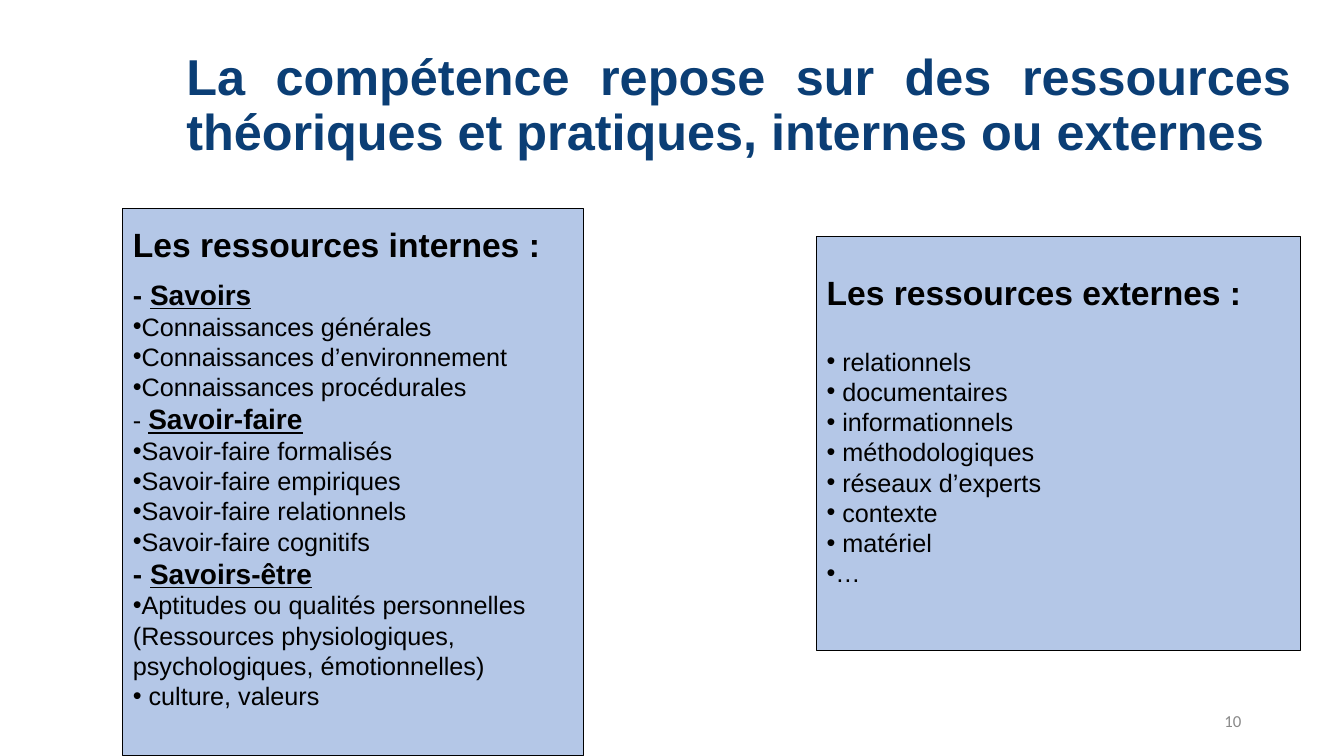
from lxml import etree
from pptx import Presentation
from pptx.dml.color import RGBColor
from pptx.enum.shapes import MSO_SHAPE
from pptx.enum.text import MSO_ANCHOR, PP_ALIGN
from pptx.oxml.ns import qn
from pptx.util import Inches, Pt

RECTANGLE = MSO_SHAPE.RECTANGLE
MIDDLE = MSO_ANCHOR.MIDDLE
LEFT, RIGHT, JUSTIFY = PP_ALIGN.LEFT, PP_ALIGN.RIGHT, PP_ALIGN.JUSTIFY

WIDTH, HEIGHT = 13.33, 7.5
BLACK, NAVY, GREY, PALE_BLUE = "000000", "0B3E75", "898989", "B4C7E7"

BODY = {"name": "Arial", "size": Pt(18), "bold": False}
HEADING = {"name": "Arial", "size": Pt(24), "bold": True}
DASH = {"name": "Arial", "size": Pt(20), "bold": True}
TOPIC = {**DASH, "underline": True}
TITLE = {"name": "Arial", "size": Pt(36), "bold": True}
NUMBER = {"name": "Calibri", "size": Pt(12)}


def colour(code):
    return RGBColor.from_string(code)


def area(left, top, width, height):
    """Turn inches into the four lengths of a shape."""
    return [Inches(value) for value in (left, top, width, height)]


def set_format(target, values):
    for name, value in values.items():
        setattr(target, name, value)


def add_span(para, text, font, code=BLACK):
    span = para.add_run()
    span.text = text
    set_format(span.font, font)
    span.font.color.rgb = colour(code)


def add_bullet_mark(para):
    properties = para._p.get_or_add_pPr()
    etree.SubElement(properties, qn("a:buFont")).set("typeface", "Arial")
    etree.SubElement(properties, qn("a:buChar")).set("char", "•")


def add_para(frame, spans, bullet=False, **layout):
    first = frame.paragraphs[0]
    para = frame.add_paragraph() if first.runs else first
    if bullet:
        add_bullet_mark(para)
    set_format(para, {"alignment": LEFT, **layout})
    for span in spans:
        add_span(para, *span)


def add_label(page, place, text, font, code, **layout):
    frame = page.shapes.add_textbox(*area(*place)).text_frame
    set_format(frame, {"word_wrap": True, "vertical_anchor": MIDDLE})
    add_para(frame, [(text, font, code)], **layout)


def add_panel(page, place, heading, margin_top, margin_bottom):
    """Add a headed blue box and return its text frame."""
    box = page.shapes.add_shape(RECTANGLE, *area(*place))
    box.shadow.inherit = False
    box.fill.solid()
    box.fill.fore_color.rgb = colour(PALE_BLUE)
    box.line.color.rgb = colour(BLACK)
    box.line.width = Pt(0.75)
    frame = box.text_frame
    set_format(frame, {"word_wrap": True, "vertical_anchor": MIDDLE,
                       "margin_top": Inches(margin_top),
                       "margin_bottom": Inches(margin_bottom)})
    add_para(frame, [(heading, HEADING)])
    return frame


def add_bullets(frame, items, gap=0):
    for index, item in enumerate(items):
        add_para(frame, [(item, BODY)], bullet=True,
                 space_before=Pt(0 if index else gap))


def add_topic(frame, topic, items, dash=DASH, gap=0):
    add_para(frame, [("- ", dash), (topic, TOPIC)], space_before=Pt(gap))
    add_bullets(frame, items)


def add_internal_resources(page):
    frame = add_panel(page, (1.22, 2.07, 4.57, 5.43),
                      "Les ressources internes :", 0.05, 0.35)
    add_topic(frame, "Savoirs", [
        "Connaissances générales",
        "Connaissances d’environnement",
        "Connaissances procédurales",
    ], gap=9.6)
    add_topic(frame, "Savoir-faire", [
        "Savoir-faire formalisés",
        "Savoir-faire empiriques",
        "Savoir-faire relationnels",
        "Savoir-faire cognitifs",
    ], dash=BODY)
    add_topic(frame, "Savoirs-être", ["Aptitudes ou qualités personnelles"])
    for line in ("(Ressources physiologiques,", "psychologiques, émotionnelles)"):
        add_para(frame, [(line, BODY)])
    add_bullets(frame, [" culture, valeurs"])


def add_external_resources(page):
    frame = add_panel(page, (8.1, 2.35, 4.8, 4.1),
                      "Les ressources externes :", 0.33, 0.6)
    add_bullets(frame, [
        " relationnels", " documentaires", " informationnels",
        " méthodologiques", " réseaux d’experts", " contexte",
        " matériel", "…",
    ], gap=24)


def main():
    deck = Presentation()
    deck.slide_width, deck.slide_height = Inches(WIDTH), Inches(HEIGHT)
    page = deck.slides.add_slide(deck.slide_layouts[6])
    add_label(page, (1.75, 0.39, 11.16, 1.34),
              "La compétence repose sur des ressources théoriques et pratiques, "
              "internes ou externes",
              TITLE, NAVY, alignment=JUSTIFY, line_spacing=0.9)
    add_internal_resources(page)
    add_external_resources(page)
    add_label(page, (9.41, 6.95, 3, 0.4), "10", NUMBER, GREY, alignment=RIGHT)
    deck.save("out.pptx")


if __name__ == "__main__":
    main()
